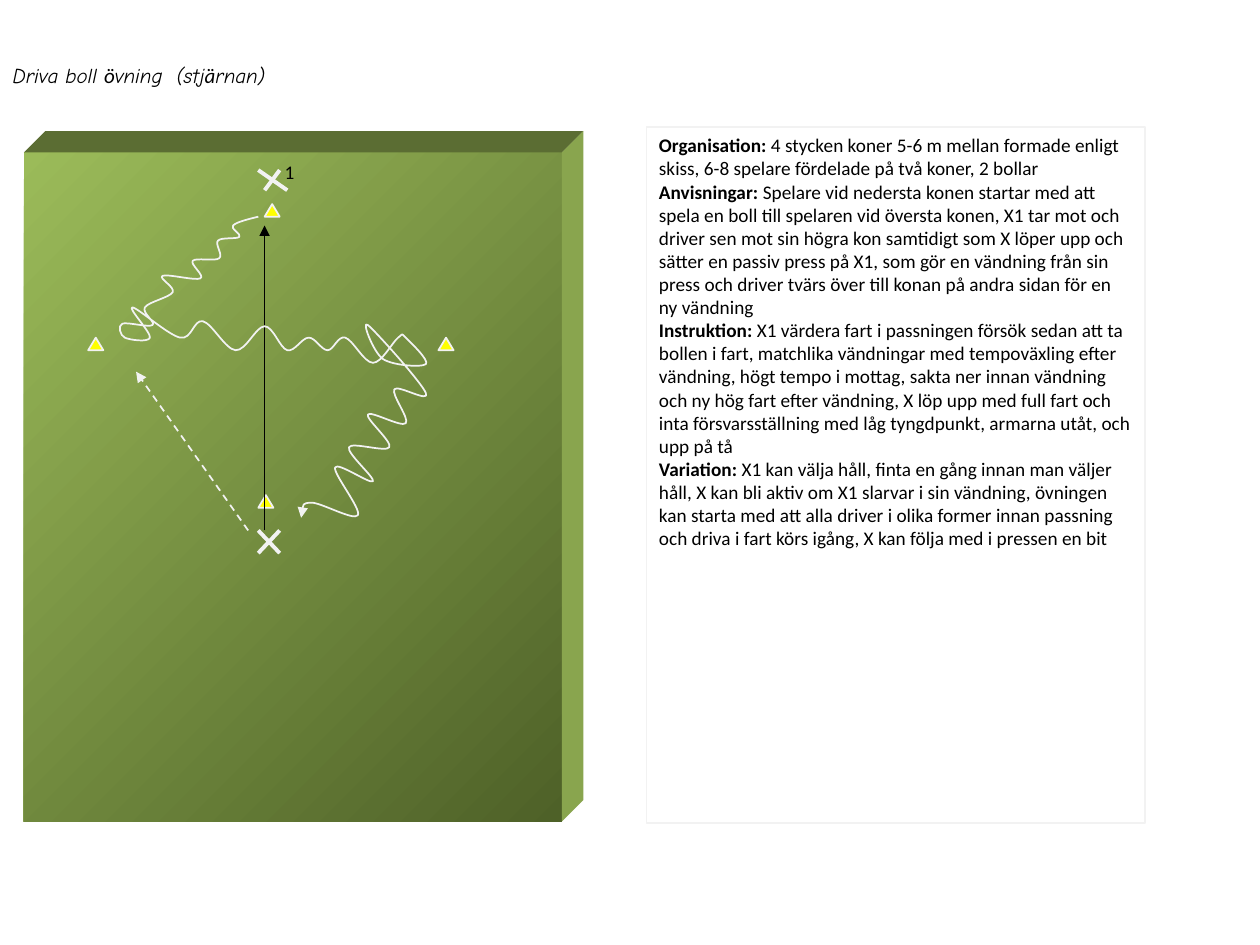
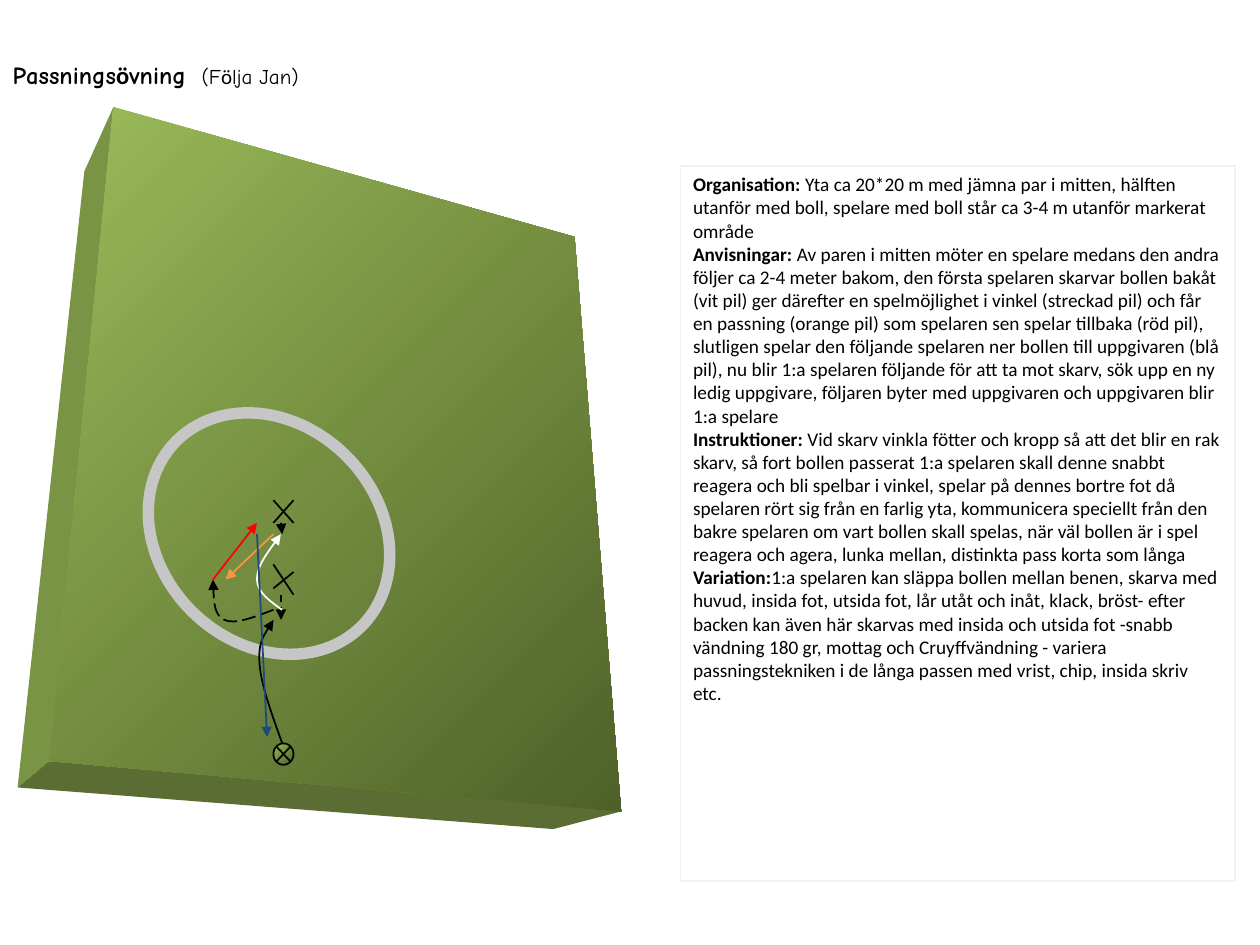
from dataclasses import dataclass

from lxml import etree
from pptx import Presentation
from pptx import util as u
from pptx.dml.color import RGBColor
from pptx.enum import dml, shapes, text
from pptx.oxml.ns import qn

SHAPE = shapes.MSO_SHAPE
DASH = dml.MSO_LINE


@dataclass(frozen=True)
class Theme:
    black: str = "000000"
    white: str = "FFFFFF"
    chalk: str = "F2F2F2"
    cone: str = "FFFF00"
    grass: str = "9BBB59"
    grass_deep: str = "4E6128"
    grass_light_side: str = "89A54E"
    grass_left_side: str = "7A9446"
    grass_dark_side: str = "5B6D33"
    ring: str = "C6C6C6"
    orange: str = "F79646"
    red: str = "FF0000"
    blue: str = "1F497D"
    body_font: str = "Calibri"
    title_font: str = "Comic Neue"
    body_size: float = 11
    title_size: float = 12
    title_large: float = 14
    thin: float = 1
    thick: float = 2.25


T = Theme()


def rgb(color):
    return RGBColor.from_string(color)


def box(left, top, width, height):
    return [u.Inches(v) for v in (left, top, width, height)]


def add_text(p, content, font=T.body_font, size=T.body_size, color=T.black,
             bold=False, italic=False):
    r = p.add_run()
    r.text = content
    r.font.name, r.font.size = font, u.Pt(size)
    r.font.bold, r.font.italic = bold, italic
    r.font.color.rgb = rgb(color)


def smooth_points(anchors):
    """Cubic control points of a smooth curve through the anchors."""
    def mix(a, b, t):
        return a[0] + (b[0] - a[0]) * t, a[1] + (b[1] - a[1]) * t

    # Inner tangents run parallel to the chord between the two neighbours
    before, after = {}, {}
    for i in range(1, len(anchors) - 1):
        (x0, y0), (x, y), (x1, y1) = anchors[i - 1:i + 2]
        dx, dy = (x1 - x0) / 6, (y1 - y0) / 6
        before[i], after[i] = (x - dx, y - dy), (x + dx, y + dy)
    last = len(anchors) - 1
    after[0] = mix(anchors[0], before[1], 0.5)
    before[last] = mix(anchors[last], after[last - 1], 0.5)
    points = [anchors[0]]
    for i in range(last):
        points += [after[i], before[i + 1], anchors[i + 1]]
    return points


class DrillDeck:
    """Holds the presentation and the slide being drawn."""

    def __init__(self):
        self.prs = Presentation()
        self.prs.slide_width, self.prs.slide_height = u.Inches(10), u.Inches(7.5)
        self.s = None

    def new_slide(self):
        self.s = self.prs.slides.add_slide(self.prs.slide_layouts[1])

    def frame(self, sp, area):
        sp.left, sp.top, sp.width, sp.height = box(*area)
        tf = sp.text_frame
        tf.auto_size = text.MSO_AUTO_SIZE.NONE
        tf.vertical_anchor = text.MSO_ANCHOR.TOP
        return tf

    def title(self, area, runs):
        tf = self.frame(self.s.shapes.title, area)
        tf.word_wrap = False
        p = tf.paragraphs[0]
        p.alignment = text.PP_ALIGN.LEFT
        for content, style in runs:
            # The title face is mixed with the body face for accented letters
            for letter_run in content.replace("ö", "|ö|").replace("ä", "|ä|").split("|"):
                font = T.body_font if letter_run in ("ö", "ä") else T.title_font
                add_text(p, letter_run, font=font, **style)

    def instructions(self, area, sections):
        sp = self.s.placeholders[1]
        tf = self.frame(sp, area)
        tf.word_wrap = True
        self.paint(sp, T.white)
        self.stroke(sp, T.chalk)
        for i, (heading, content) in enumerate(sections):
            p = tf.add_paragraph() if i else tf.paragraphs[0]
            p.space_before = u.Pt(0)
            pPr = p._p.get_or_add_pPr()
            pPr.set("marL", "0")
            pPr.set("indent", "0")
            etree.SubElement(pPr, qn("a:buNone"))
            add_text(p, heading, bold=True)
            add_text(p, content)

    def paint(self, sp, color):
        if color is None:
            sp.fill.background()
        elif isinstance(color, tuple):
            sp.fill.gradient()
            sp.fill.gradient_angle = 315
            for stop, c in zip(sp.fill.gradient_stops, color):
                stop.color.rgb = rgb(c)
        else:
            sp.fill.solid()
            sp.fill.fore_color.rgb = rgb(color)

    def stroke(self, sp, color, width=T.thin, dash=None, arrow=False):
        if color is None:
            sp.line.fill.background()
            return
        sp.line.color.rgb = rgb(color)
        sp.line.width = u.Pt(width)
        if dash:
            sp.line.dash_style = dash
        if arrow:
            ln = sp.element.spPr.find(qn("a:ln"))
            etree.SubElement(ln, qn("a:tailEnd"), type="triangle")

    def shape(self, kind, area, fill, line=None):
        sp = self.s.shapes.add_shape(kind, *box(*area))
        sp.shadow.inherit = False
        self.paint(sp, fill)
        self.stroke(sp, line)
        return sp

    def outline(self, points, fill=None, line=None, closed=True, **style):
        pts = [(u.Inches(x), u.Inches(y)) for x, y in points]
        builder = self.s.shapes.build_freeform(*pts[0])
        builder.add_line_segments(pts[1:], close=closed)
        sp = builder.convert_to_shape()
        sp.shadow.inherit = False
        self.paint(sp, fill)
        self.stroke(sp, line, **style)
        return sp

    def curve(self, anchors, color, **style):
        sp = self.outline(smooth_points(anchors), line=color, closed=False,
                          arrow=True, **style)
        # Each three line segments become one cubic segment
        route = next(sp.element.iter(qn("a:path")))
        steps = route.findall(qn("a:lnTo"))
        for i in range(0, len(steps), 3):
            cubic = etree.SubElement(route, qn("a:cubicBezTo"))
            for step in steps[i:i + 3]:
                cubic.append(step[0])
                route.remove(step)

    def line(self, start, end, color, **style):
        sp = self.s.shapes.add_connector(shapes.MSO_CONNECTOR.STRAIGHT,
                                         *box(*start, *end))
        self.stroke(sp, color, **style)
        etree.SubElement(sp.element.spPr, qn("a:effectLst"))

    def cross(self, strokes, color, width=T.thin):
        for x0, y0, x1, y1 in strokes:
            self.line((x0, y0), (x1, y1), color, width=width)

    def label(self, area, content):
        tf = self.frame(self.s.shapes.add_textbox(*box(*area)), area)
        tf.margin_left = tf.margin_right = tf.margin_top = tf.margin_bottom = 0
        tf.word_wrap = False
        add_text(tf.paragraphs[0], content)


GRASS = (T.grass, T.grass_deep)


def star_drill(d):
    d.new_slide()
    d.title((0, 0.45, 2.36, 0.61),
            [("Driva boll övning  (stjärnan)", dict(size=T.title_size, italic=True))])

    # Pitch slab: front, top and right faces
    left, top, width, height, depth = 0.19, 1.21, 4.27, 5.31, 0.17
    right, bottom = left + width, top + height
    d.shape(SHAPE.RECTANGLE, (left, top, width, height), GRASS)
    d.outline([(left, top), (left + depth, top - depth),
               (right + depth, top - depth), (right, top)], T.grass_dark_side)
    d.outline([(right, top), (right + depth, top - depth),
               (right + depth, bottom - depth), (right, bottom)], T.grass_light_side)

    # Cones and players
    for x, y in [(3.48, 2.68), (0.7, 2.68), (2.1, 1.62), (2.05, 3.93)]:
        d.shape(SHAPE.FLOWCHART_EXTRACT, (x, y, 0.12, 0.1), T.cone, T.chalk)
    d.cross([(2.05, 4.39, 2.22, 4.21), (2.05, 4.21, 2.22, 4.39)], T.chalk, T.thick)
    d.cross([(2.22, 1.35, 2.1, 1.51), (2.05, 1.35, 2.28, 1.51)], T.chalk, T.thick)
    d.label((2.26, 1.27, 0.1, 0.19), "1")

    # Pass, dribble and run
    d.line((2.1, 4.21), (2.1, 1.79), T.black, arrow=True)
    d.curve([(2.05, 1.72), (1.85, 1.79), (1.9, 1.88), (1.73, 1.91), (1.74, 2.05),
             (1.53, 2.07), (1.59, 2.21), (1.29, 2.19), (1.37, 2.32), (1.15, 2.44),
             (1.21, 2.58), (0.97, 2.57), (0.99, 2.68), (1.19, 2.68), (1.05, 2.44),
             (1.43, 2.68), (1.61, 2.55), (1.87, 2.78), (2.1, 2.59), (2.28, 2.78),
             (2.45, 2.68), (2.6, 2.78), (2.74, 2.68), (2.96, 2.88), (3.16, 2.68),
             (3.22, 2.68), (3.38, 2.89), (3.04, 2.85), (2.92, 2.58), (3.38, 3.12),
             (3.13, 3.09), (3.22, 3.36), (2.92, 3.29), (3.09, 3.55), (2.77, 3.55),
             (2.96, 3.82), (2.66, 3.71), (2.84, 4.09), (2.47, 3.99), (2.39, 4.11)],
            T.chalk)
    d.line((1.97, 4.21), (1.08, 2.95), T.chalk, dash=DASH.DASH, arrow=True)

    d.instructions((5.13, 1.01, 3.96, 5.52), [
        ("Organisation:", " 4 stycken koner 5-6 m mellan formade enligt skiss, 6-8 spelare fördelade på två koner, 2 bollar"),
        ("Anvisningar: ", "Spelare vid nedersta konen startar med att spela en boll till spelaren vid översta konen, X1 tar mot och driver sen mot sin högra kon samtidigt som X löper upp och sätter en passiv press på X1, som gör en vändning från sin press och driver tvärs över till konan på andra sidan för en ny vändning"),
        ("Instruktion:", " X1 värdera fart i passningen försök sedan att ta bollen i fart, matchlika vändningar med tempoväxling efter vändning, högt tempo i mottag, sakta ner innan vändning och ny hög fart efter vändning, X löp upp med full fart och inta försvarsställning med låg tyngdpunkt, armarna utåt, och upp på tå"),
        ("Variation: ", "X1 kan välja håll, finta en gång innan man väljer håll, X kan bli aktiv om X1 slarvar i sin vändning, övningen kan starta med att alla driver i olika former innan passning och driva i fart körs igång, X kan följa med i pressen en bit"),
    ])


def passing_drill(d):
    d.new_slide()
    d.title((0, 0.43, 2.62, 0.64),
            [("Passningsövning ", dict(size=T.title_large, bold=True)),
             (" (Följa Jan)", dict(size=T.title_size))])

    # Tilted pitch slab: front, left and bottom faces
    top_left, top_right = (0.9, 0.85), (4.56, 1.88)
    low_left, low_right = (0.39, 6.04), (4.93, 6.44)
    back_left = (0.14, 6.25)
    d.outline([top_left, (0.67, 1.36), back_left, low_left], T.grass_left_side)
    d.outline([low_left, back_left, (4.39, 6.58), low_right], T.grass_dark_side)
    d.outline([top_left, top_right, low_right, low_left], GRASS)

    # Centre circle, seen at an angle
    ring = d.shape(SHAPE.DONUT, (1.05, 3.32, 2.17, 1.83), T.ring)
    ring.adjustments[0] = 0.05
    ring.rotation = 45

    # Players and passer
    d.cross([(2.33, 4.54, 2.17, 4.67), (2.17, 4.48, 2.33, 4.72)], T.black)
    d.cross([(2.17, 3.97, 2.33, 4.15), (2.17, 4.15, 2.33, 3.97)], T.black)
    d.shape(SHAPE.FLOWCHART_SUMMING_JUNCTION, (2.17, 5.9, 0.16, 0.17), GRASS, T.black)

    # Runs and passes
    d.line((2.23, 4.15), (2.24, 4.24), T.black, arrow=True)
    d.line((2.23, 4.72), (2.23, 4.92), T.black, dash=DASH.DASH_DOT, arrow=True)
    d.curve([(2.24, 5.9), (2.06, 5.27), (2.17, 4.92)], T.black)
    d.curve([(2.24, 4.84), (2.04, 4.6), (2.23, 4.24)], T.white)
    d.curve([(2.17, 4.84), (1.78, 4.92), (1.69, 4.6)], T.black, dash=DASH.LONG_DASH)
    for start, end, color in [((2.17, 4.24), (1.79, 4.6), T.orange),
                              ((1.69, 4.6), (2.04, 4.15), T.red),
                              ((2.04, 4.24), (2.12, 5.85), T.blue)]:
        d.line(start, end, color, arrow=True)

    d.instructions((5.4, 1.32, 4.4, 5.67), [
        ("Organisation: ", "Yta ca 20*20 m med jämna par i mitten, hälften utanför med boll, spelare med boll står ca 3-4 m utanför markerat område"),
        ("Anvisningar:", " Av paren i mitten möter en spelare medans den andra följer ca 2-4 meter bakom, den första spelaren skarvar bollen bakåt (vit pil) ger därefter en spelmöjlighet i vinkel (streckad pil) och får en passning (orange pil) som spelaren sen spelar tillbaka (röd pil), slutligen spelar den följande spelaren ner bollen till uppgivaren (blå pil), nu blir 1:a spelaren följande för att ta mot skarv, sök upp en ny ledig uppgivare, följaren byter med uppgivaren och uppgivaren blir 1:a spelare"),
        ("Instruktioner:", " Vid skarv vinkla fötter och kropp så att det blir en rak skarv, så fort bollen passerat 1:a spelaren skall denne snabbt reagera och bli spelbar i vinkel, spelar på dennes bortre fot då spelaren rört sig från en farlig yta, kommunicera speciellt från den bakre spelaren om vart bollen skall spelas, när väl bollen är i spel reagera och agera, lunka mellan, distinkta pass korta som långa"),
        ("Variation:", "1:a spelaren kan släppa bollen mellan benen, skarva med huvud, insida fot, utsida fot, lår utåt och inåt, klack, bröst- efter backen kan även här skarvas med insida och utsida fot -snabb vändning 180 gr, mottag och Cruyffvändning - variera passningstekniken i de långa passen med vrist, chip, insida skriv etc."),
    ])


def main():
    d = DrillDeck()
    star_drill(d)
    passing_drill(d)
    d.prs.save("out.pptx")


if __name__ == "__main__":
    main()
